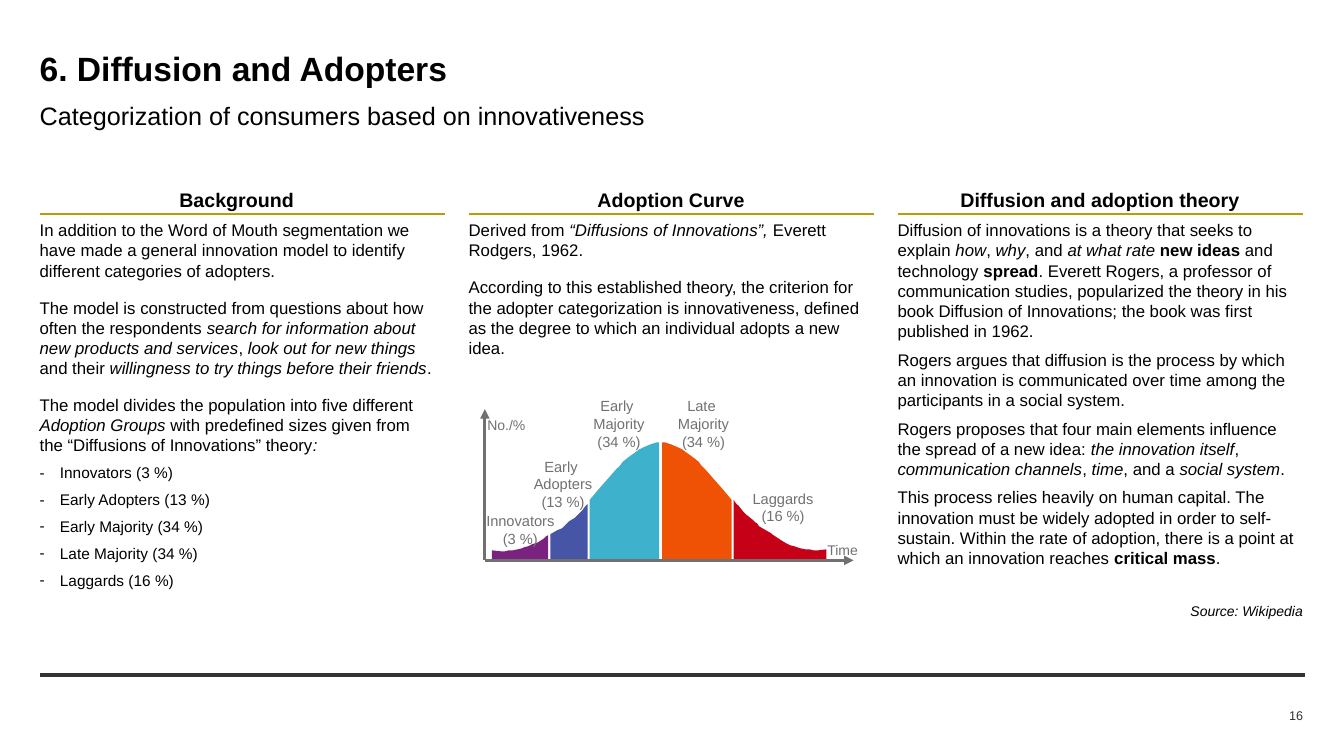
from dataclasses import dataclass
from lxml.etree import SubElement
from pptx import Presentation
from pptx.dml.color import RGBColor
from pptx.enum.shapes import MSO_CONNECTOR
from pptx.enum.text import MSO_ANCHOR, PP_ALIGN
from pptx.oxml.ns import qn
from pptx.util import Cm, Pt

LEFT, CENTER, RIGHT = PP_ALIGN.LEFT, PP_ALIGN.CENTER, PP_ALIGN.RIGHT
BLACK, DARK, GRAY, GOLD = "000000", "333333", "717171", "BD9B08"
UNIT = Cm(0.0254)  # curve points count hundredths of an inch
BASE = 555
PITCH = 10.81


@dataclass
class Para:
    """One paragraph; *stars* mark bold, _underscores_ italic, newlines a line break."""
    text: str
    size: float = 12
    before: float = 6
    align: PP_ALIGN = LEFT
    color: str = BLACK
    bullet: bool = False
    bold: bool = False


@dataclass
class Box:
    left: float
    top: float
    width: float
    height: float
    paras: list[Para]
    wrap: bool = True
    anchor: MSO_ANCHOR = MSO_ANCHOR.TOP


@dataclass
class Line:
    start: tuple[float, float]
    end: tuple[float, float]
    color: str
    width: float
    arrow: bool = False


@dataclass
class Part:
    """A slice of the curve: its upper edge, closed along the base."""
    color: str
    edge: list[tuple[int, int]]


def rgb(value: str) -> RGBColor:
    return RGBColor.from_string(value)


def add_runs(para, text: str) -> None:
    for i, part in enumerate(text.split("*")):
        for j, bit in enumerate(part.split("_")):
            if bit:
                run = para.add_run()
                run.text = bit
                if i % 2:
                    run.font.bold = True
                if j % 2:
                    run.font.italic = True


def fill_para(para, item: Para) -> None:
    para.alignment = item.align
    para.space_before = Pt(item.before)
    if item.bullet:
        props = para._p.get_or_add_pPr()
        props.set("marL", str(Cm(0.51)))
        props.set("indent", str(-Cm(0.51)))
        SubElement(props, qn("a:buFont"), typeface="Arial")
        SubElement(props, qn("a:buChar"), char="-")
    font = para.font
    font.name, font.size, font.bold = "Arial", Pt(item.size), item.bold
    font.color.rgb = rgb(item.color)
    for i, row in enumerate(item.text.split("\n")):
        if i:
            para.add_line_break()
        add_runs(para, row)


def draw_box(shapes, box: Box) -> None:
    frame = shapes.add_textbox(Cm(box.left), Cm(box.top), Cm(box.width), Cm(box.height)).text_frame
    frame.margin_left = frame.margin_right = frame.margin_top = frame.margin_bottom = 0
    frame.word_wrap = box.wrap
    frame.vertical_anchor = box.anchor
    for i, item in enumerate(box.paras):
        fill_para(frame.add_paragraph() if i else frame.paragraphs[0], item)


def draw_line(shapes, line: Line) -> None:
    ends = [Cm(v) for v in (*line.start, *line.end)]
    link = shapes.add_connector(MSO_CONNECTOR.STRAIGHT, *ends)
    link.line.color.rgb = rgb(line.color)
    link.line.width = Pt(line.width)
    if line.arrow:
        SubElement(link.line._get_or_add_ln(), qn("a:tailEnd"), type="triangle")
    SubElement(link._element.spPr, qn("a:effectLst"))


def draw_part(shapes, part: Part) -> None:
    first, last = part.edge[0][0], part.edge[-1][0]
    pen = shapes.build_freeform(first, BASE, scale=UNIT)
    pen.add_line_segments([*part.edge, (last, BASE)], close=True)
    shape = pen.convert_to_shape()
    shape.shadow.inherit = False
    shape.fill.solid()
    shape.fill.fore_color.rgb = rgb(part.color)
    shape.line.fill.background()


def head(text: str) -> Para:
    return Para(text, 14, 0, CENTER, bold=True)


def label(left: float, top: float, width: float, *rows: str) -> Box:
    height = 0.45 * sum(row.count("\n") + 1 for row in rows)
    return Box(left, top, width, height, [Para(r, 10.5, 0, CENTER, GRAY) for r in rows], False)


def axis_name(left: float, top: float, width: float, text: str) -> Box:
    return Box(left, top, width, 0.43, [Para(text, 10, 0, RIGHT, GRAY)], False)


GROUPS = [("Innovators", 3), ("Early Adopters", 13), ("Early Majority", 34),
          ("Late Majority", 34), ("Laggards", 16)]

BACK = [
    head("Background"),
    Para("In addition to the Word of Mouth segmentation we have made a general innovation model "
         "to identify different categories of adopters."),
    Para("The model is constructed from questions about how often the respondents _search for "
         "information about new products and services_, _look out for new things _and their "
         "_willingness to try things before their friends_.", before=12),
    Para("The model divides the population into five different _Adoption Groups_ with predefined "
         "sizes given from the “Diffusions of Innovations” theory_:_", before=12),
    *[Para(f"{name} ({share} %)", 11, bullet=True) for name, share in GROUPS],
]
CURVE = [
    head("Adoption Curve"),
    Para("Derived from _“Diffusions of Innovations”, _Everett Rodgers, 1962."),
    Para("According to this established theory, the criterion for the adopter categorization is "
         "innovativeness, defined as the degree to which an individual adopts a new idea.",
         before=12),
]
THEORY = [
    head("Diffusion and adoption theory"),
    Para("Diffusion of innovations is a theory that seeks to explain _how_, _why_, and _at what "
         "rate _*new ideas *and technology *spread*. Everett Rogers, a professor of communication "
         "studies, popularized the theory in his book Diffusion of Innovations; the book was "
         "first published in 1962."),
    Para("Rogers argues that diffusion is the process by which an innovation is communicated over "
         "time among the participants in a social system."),
    Para("Rogers proposes that four main elements influence the spread of a new idea: _the "
         "innovation itself_, _communication channels_, _time_, and a _social system_."),
    Para("This process relies heavily on human capital. The innovation must be widely adopted in "
         "order to self-sustain. Within the rate of adoption, there is a point at which an "
         "innovation reaches *critical mass*."),
    Para("_Source: Wikipedia_", 10, 25, RIGHT),
]

RISE = [(585, 496), (596, 483), (604, 474), (611, 466), (615, 462), (618, 458), (623, 454),
        (630, 449), (634, 446), (638, 444), (645, 441), (651, 439), (654, 439)]
PARTS = [
    Part("7A2280", [(488, 546), (497, 547), (501, 547), (505, 546), (509, 546), (514, 545),
                    (518, 544), (520, 543), (524, 542), (528, 540), (534, 538), (537, 536),
                    (540, 534), (542, 532), (544, 531)]),
    Part("4655A5", [(546, 530), (553, 526), (558, 524), (560, 522), (563, 519), (565, 517),
                    (570, 514), (574, 510), (578, 506), (581, 502), (583, 500)]),
    Part("3EB1CC", RISE),
    Part("EF5205", [(1311 - x, y) for x, y in RISE]),
    Part("C50017", [(765, 529), (766, 530), (769, 532), (772, 534), (775, 536), (780, 539),
                    (784, 541), (788, 542), (791, 543), (794, 544), (799, 545), (803, 545),
                    (807, 546), (812, 546), (820, 545)]),
    Part("C50017", [(728, 496), (730, 499), (733, 502), (737, 507), (741, 511), (746, 515),
                    (749, 518), (751, 519), (753, 522), (758, 525), (765, 529)]),
]

ORIGIN = (12.22, 14.12)
LINES = [
    Line((1, 17), (32.88, 17), DARK, 3),
    Line(ORIGIN, (12.22, 10.31), GRAY, 2.25, True),
    Line(ORIGIN, (21.51, 14.12), GRAY, 2.25, True),
    *[Line((1 + PITCH * i, 5.39), (11.21 + PITCH * i, 5.39), GOLD, 1.5) for i in range(3)],
]
BOXES = [
    Box(1, 1.2, 31.85, 1.12, [Para("6. Diffusion and Adopters", 24, 0, bold=True)]),
    Box(1, 2.53, 31.88, 1.09,
        [Para("Categorization of consumers based on innovativeness", 18, 0)]),
    *[Box(1 + PITCH * i, 4.74, width, 11.13, paras)
      for i, (width, paras) in enumerate([(9.93, BACK), (10.21, CURVE), (10.21, THEORY)])],
    axis_name(20.83, 13.64, 0.79, "Time"),
    axis_name(12.27, 10.5, 0.97, "No./%"),
    label(12.24, 12.9, 1.75, "Innovators", "(3 %)"),
    label(13.44, 11.53, 1.5, "Early \nAdopters", "(13 %)"),
    label(14.94, 10.01, 1.32, "Early \nMajority", "(34 %)"),
    label(17.07, 10.01, 1.32, "Late \nMajority", "(34 %)"),
    label(18.95, 12.34, 1.57, "Laggards", "(16 %)"),
    Box(30.15, 17.75, 2.69, 0.56, [Para("16", 9, 0, RIGHT, DARK)], anchor=MSO_ANCHOR.MIDDLE),
]


def main() -> None:
    deck = Presentation()
    deck.slide_width, deck.slide_height = Cm(33.87), Cm(19.05)
    shapes = deck.slides.add_slide(deck.slide_layouts[6]).shapes
    for part in PARTS:
        draw_part(shapes, part)
    for line in LINES:
        draw_line(shapes, line)
    for box in BOXES:
        draw_box(shapes, box)
    deck.save("out.pptx")


if __name__ == "__main__":
    main()
